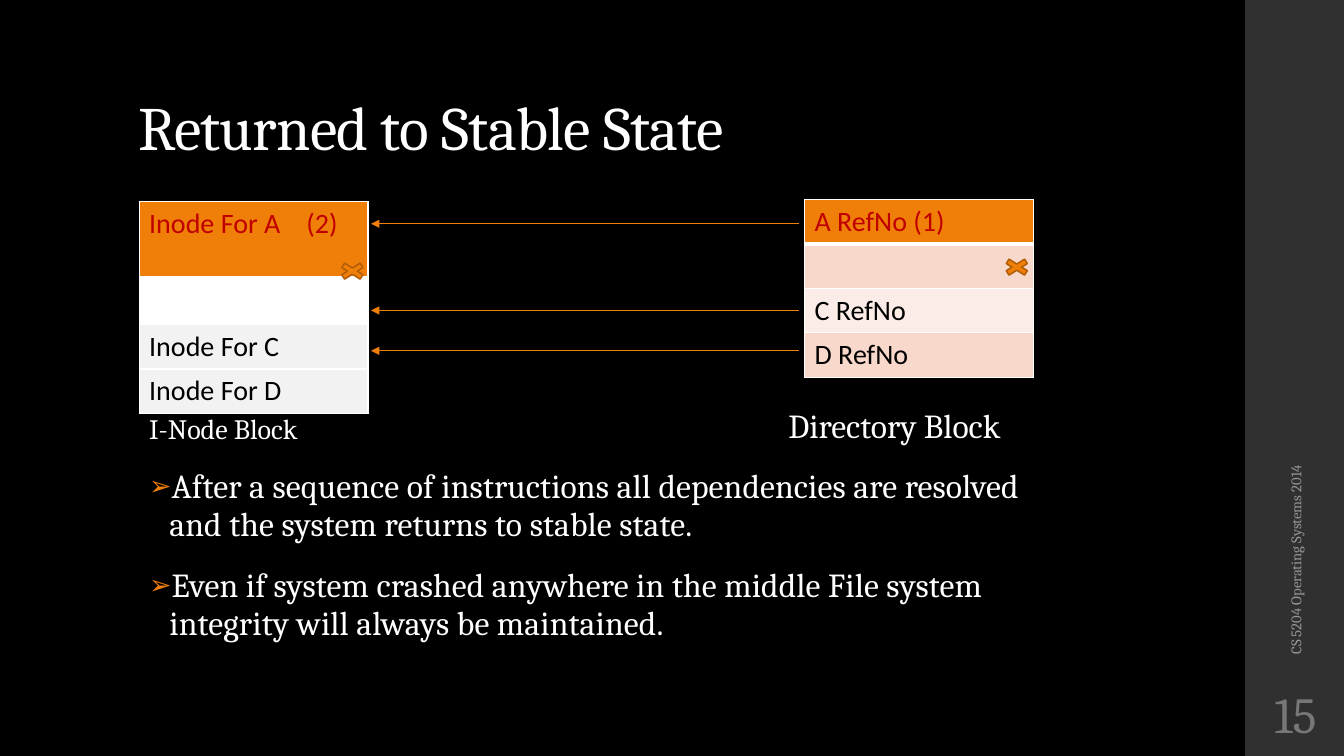
from lxml import etree
from pptx import Presentation
from pptx.dml.color import RGBColor
from pptx.enum import shapes, text
from pptx.oxml.ns import qn
from pptx.util import Inches, Pt

# Content
TITLE = "Returned to Stable State"
POINTS = [
    "After a sequence of instructions all dependencies are resolved and the system returns to stable state.",
    "Even if system crashed anywhere in the middle File system integrity will always be maintained.",
]
COLORS = dict(back="000000", side="303030", white="FFFFFF", black="000000",
              orange="F07F09", rust="B25E07", red="C00000", gray="F2F2F2",
              peach="F9D8CC", pale="FCECE7", footer="969696", number="777777")
# Each block: left, top, rows of (text, fill, height)
BLOCKS = [
    (1.38, 2.0, [("Inode For A\t(2)", "orange", 0.76), ("", "white", 0.46),
                 ("Inode For C", "gray", 0.44), ("Inode For D", "gray", 0.44)]),
    (7.98, 1.98, [("A RefNo (1)", "orange", 0.44), ("", "peach", 0.44),
                  ("C RefNo", "pale", 0.44), ("D RefNo", "peach", 0.44)]),
]
BLOCK_WIDTH = 2.27
COUNT_TAB = 1.56
ARROW_ROWS = [2.22, 3.08, 3.48]
ARROW_FROM, ARROW_TO = 7.92, 3.68
CROSSES = [(3.32, 2.58), (9.91, 2.54)]
# Each label: text, box, size, colour, extra frame settings, alignment, rotation
INSET = Inches(0.05)
MIDDLE = dict(vertical_anchor=text.MSO_ANCHOR.MIDDLE)
NUMBER_FRAME = dict(MIDDLE, margin_left=INSET, margin_right=INSET)
LEFT, CENTER = text.PP_ALIGN.LEFT, text.PP_ALIGN.CENTER
LABELS = [
    ("I-Node Block", (1.38, 4.03, 2.27, 0.45), 20, "white", {}, LEFT, 0),
    ("Directory Block", (7.72, 3.97, 2.6, 0.5), 24, "white", {}, LEFT, 0),
    ("CS 5204 Operating Systems 2014", (10.89, 4.43, 3.92, 0.4), 10.5, "footer", MIDDLE, LEFT, 270),
    ("15", (12.35, 6.75, 1, 0.65), 36, "number", NUMBER_FRAME, CENTER, 0),
]


def rgb(name):
    return RGBColor.from_string(COLORS[name])


def inches(values):
    return [Inches(value) for value in values]


def apply(target, **settings):
    for key, value in settings.items():
        setattr(target, key, value)


def add_xml(parent, tag, **attributes):
    return etree.SubElement(parent, qn(tag), attributes)


def write(paragraph, words, size, color, font="Cambria", spacing=0):
    run = paragraph.add_run()
    run.text = words
    apply(run.font, name=font, size=Pt(size))
    run.font.color.rgb = rgb(color)
    if spacing:
        run.font._element.set("spc", str(spacing))


def place(shape, box):
    apply(shape, **dict(zip(("left", "top", "width", "height"), inches(box))))


def paint(shape, fill, line=None, width=1.1):
    shape.shadow.inherit = False
    shape.fill.solid()
    shape.fill.fore_color.rgb = rgb(fill)
    if line:
        shape.line.color.rgb = rgb(line)
        shape.line.width = Pt(width)
    else:
        shape.line.fill.background()


def add_border(cell, side, points):
    line = add_xml(cell._tc.get_or_add_tcPr(), f"a:ln{side}", w=str(Pt(points)))
    add_xml(add_xml(line, "a:solidFill"), "a:srgbClr", val=COLORS["white"])


def add_block(slide, left, top, rows):
    height = sum(row[2] for row in rows)
    block = slide.shapes.add_table(len(rows), 1, *inches((left, top, BLOCK_WIDTH, height))).table
    apply(block, first_row=False, horz_banding=False)
    for index, (words, fill, row_height) in enumerate(rows):
        block.rows[index].height = Inches(row_height)
        cell = block.cell(index, 0)
        header = index == 0
        for side in ("L", "R", "T", "B") if header else ("L", "R", "B"):
            add_border(cell, side, 3 if header and side == "B" else 1)
        cell.fill.solid()
        cell.fill.fore_color.rgb = rgb(fill)
        paragraph = cell.text_frame.paragraphs[0]
        if words:
            write(paragraph, words, 20, "red" if header else "black", "Calibri")
        if "\t" in words:
            tabs = add_xml(paragraph._p.get_or_add_pPr(), "a:tabLst")
            add_xml(tabs, "a:tab", pos=str(Inches(COUNT_TAB)), algn="l")


def add_arrow(slide, y):
    arrow = slide.shapes.add_connector(shapes.MSO_CONNECTOR.STRAIGHT,
                                       *inches((ARROW_FROM, y, ARROW_TO, y)))
    arrow.line.color.rgb = rgb("orange")
    arrow.line.width = Pt(0.75)
    properties = arrow._element.spPr
    add_xml(properties.find(qn("a:ln")), "a:tailEnd", type="triangle")
    add_xml(properties, "a:effectLst")


def main():
    deck = Presentation()
    apply(deck, slide_width=Inches(13.33), slide_height=Inches(7.5))
    slide = deck.slides.add_slide(deck.slide_layouts[1])
    slide.background.fill.solid()
    slide.background.fill.fore_color.rgb = rgb("back")

    # Side band
    band = slide.shapes.add_shape(shapes.MSO_SHAPE.RECTANGLE, *inches((12.35, 0, 1, 7.5)))
    paint(band, "side")

    # Title
    title = slide.shapes.title
    place(title, (1.27, 0.23, 10.6, 1.45))
    apply(title.text_frame, vertical_anchor=text.MSO_ANCHOR.BOTTOM,
          auto_size=text.MSO_AUTO_SIZE.NONE, word_wrap=True)
    heading = title.text_frame.paragraphs[0]
    apply(heading, alignment=LEFT, line_spacing=0.9)
    write(heading, TITLE, 44, "white", spacing=-50)

    # Bulleted points
    body = slide.placeholders[1]
    place(body, (1.38, 4.59, 9.4, 2.17))
    apply(body.text_frame, auto_size=text.MSO_AUTO_SIZE.NONE, word_wrap=True)
    for index, words in enumerate(POINTS):
        point = body.text_frame.paragraphs[0] if index == 0 else body.text_frame.add_paragraph()
        apply(point, line_spacing=0.95, space_before=Pt(0), space_after=Pt(16))
        write(point, words, 24, "white", spacing=10)
        properties = point._p.get_or_add_pPr()
        properties.set("marL", str(Inches(0.2)))
        properties.set("indent", str(-Inches(0.2)))
        add_xml(add_xml(properties, "a:buClr"), "a:srgbClr", val=COLORS["orange"])
        add_xml(properties, "a:buSzPct", val="80000")
        add_xml(properties, "a:buChar", char="➢")

    # Blocks, arrows and crosses
    for block in BLOCKS:
        add_block(slide, *block)
    for y in ARROW_ROWS:
        add_arrow(slide, y)
    for left, top in CROSSES:
        cross = slide.shapes.add_shape(shapes.MSO_SHAPE.MATH_MULTIPLY,
                                       *inches((left, top, 0.35, 0.22)))
        paint(cross, "orange", "rust")

    # Block captions, footer and slide number
    for words, box, size, color, frame, alignment, rotation in LABELS:
        label = slide.shapes.add_textbox(*inches(box))
        label.rotation = rotation
        apply(label.text_frame, word_wrap=True, **frame)
        paragraph = label.text_frame.paragraphs[0]
        paragraph.alignment = alignment
        write(paragraph, words, size, color)

    deck.save("out.pptx")


if __name__ == "__main__":
    main()
